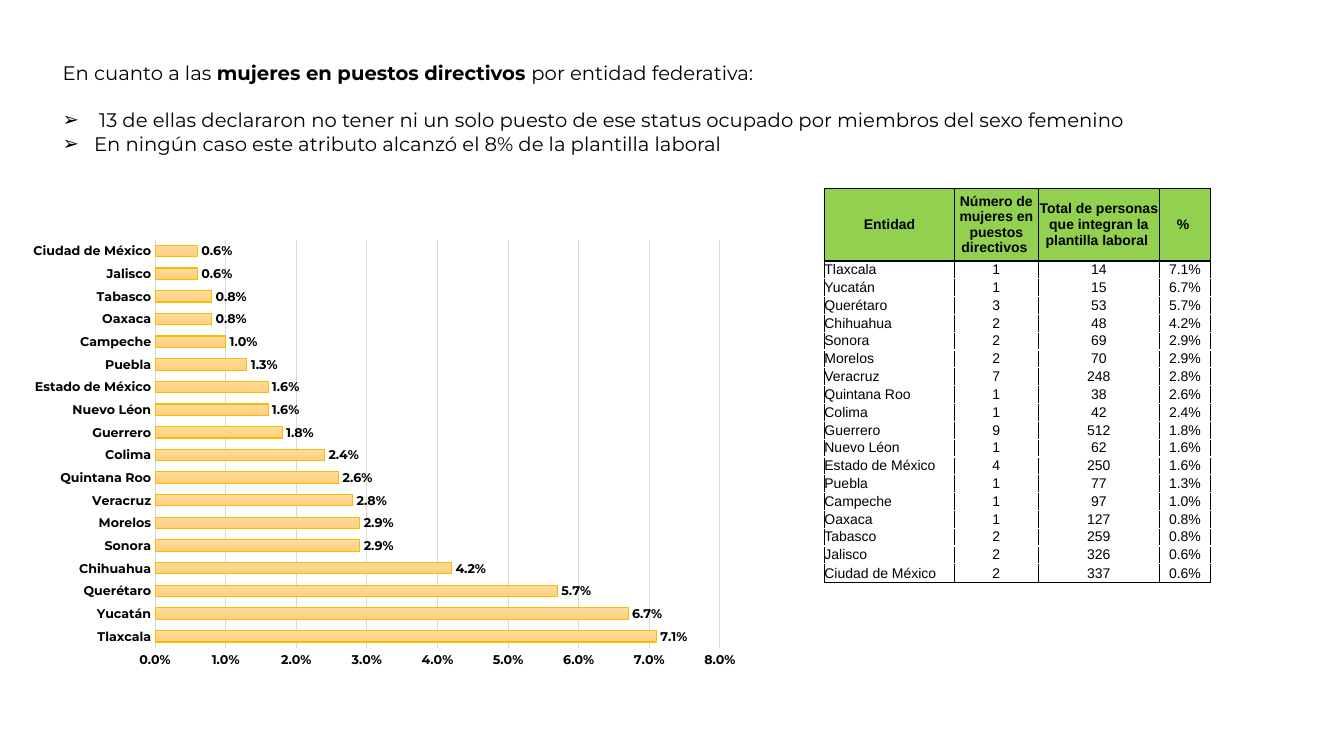
from dataclasses import dataclass

from lxml import etree
from pptx import Presentation
from pptx.chart.data import CategoryChartData
from pptx.dml.color import RGBColor
from pptx.enum.chart import XL_CHART_TYPE, XL_LABEL_POSITION, XL_TICK_MARK
from pptx.enum.text import MSO_ANCHOR, MSO_AUTO_SIZE, PP_ALIGN
from pptx.oxml import parse_xml
from pptx.oxml.ns import nsdecls, qn
from pptx.util import Pt

BAR_CLUSTERED = XL_CHART_TYPE.BAR_CLUSTERED
OUTSIDE_END = XL_LABEL_POSITION.OUTSIDE_END
NO_TICK = XL_TICK_MARK.NONE
TOP, MIDDLE = MSO_ANCHOR.TOP, MSO_ANCHOR.MIDDLE
NO_AUTOFIT = MSO_AUTO_SIZE.NONE
LEFT, CENTER = PP_ALIGN.LEFT, PP_ALIGN.CENTER


@dataclass(frozen=True)
class Theme:
    text_font: str = "Montserrat"
    table_font: str = "Arial"
    text_size: int = 14
    table_size: int = 10
    chart_size: int = 9
    black: RGBColor = RGBColor(0, 0, 0)
    header: RGBColor = RGBColor(0x92, 0xD0, 0x50)
    grid: RGBColor = RGBColor(0xD9, 0xD9, 0xD9)
    bar_line: RGBColor = RGBColor(0xF9, 0xBC, 0x00)
    bar_top: RGBColor = RGBColor(0xFF, 0xDB, 0x9E)
    bar_bottom: RGBColor = RGBColor(0xFF, 0xD0, 0x7C)


THEME = Theme()

INTRO = [
    ("En cuanto a las ", False),
    ("mujeres en puestos directivos ", True),
    ("por entidad federativa:", False),
]
FINDINGS = [
    " 13 de ellas declararon no tener ni un solo puesto de ese status ocupado por miembros del sexo femenino",
    "En ningún caso este atributo alcanzó el 8% de la plantilla laboral",
]
HEADINGS = [
    "Entidad",
    "Número de mujeres en puestos directivos ",
    "Total de personas que integran la plantilla laboral ",
    "% ",
]
# State, women in management posts, total staff
STATES = [
    ("Tlaxcala", 1, 14),
    ("Yucatán", 1, 15),
    ("Querétaro", 3, 53),
    ("Chihuahua", 2, 48),
    ("Sonora", 2, 69),
    ("Morelos", 2, 70),
    ("Veracruz", 7, 248),
    ("Quintana Roo", 1, 38),
    ("Colima", 1, 42),
    ("Guerrero", 9, 512),
    ("Nuevo Léon", 1, 62),
    ("Estado de México", 4, 250),
    ("Puebla", 1, 77),
    ("Campeche", 1, 97),
    ("Oaxaca", 1, 127),
    ("Tabasco", 2, 259),
    ("Jalisco", 2, 326),
    ("Ciudad de México", 2, 337),
]


def apply_format(target, values):
    for name, value in values.items():
        setattr(target, name, value)


def format_font(font, name, size, bold=False):
    apply_format(font, {"name": name, "size": Pt(size), "bold": bold})
    font.color.rgb = THEME.black


def add_span(para, text, font_name, size, bold=False):
    span = para.add_run()
    span.text = text
    format_font(span.font, font_name, size, bold)


def place_text(box, top, height):
    apply_format(box, {"left": Pt(37.5), "top": Pt(top), "width": Pt(849.5), "height": Pt(height)})
    apply_format(box.text_frame, {
        "word_wrap": True, "auto_size": NO_AUTOFIT, "vertical_anchor": TOP,
        "margin_left": Pt(7.2), "margin_right": Pt(7.2),
        "margin_top": Pt(3.6), "margin_bottom": Pt(3.6),
    })


def add_bullet(para):
    properties = para._p.get_or_add_pPr()
    properties.set("marL", str(Pt(22.5)))
    properties.set("indent", str(-Pt(22.5)))
    etree.SubElement(properties, qn("a:buFont")).set("typeface", THEME.table_font)
    etree.SubElement(properties, qn("a:buChar")).set("char", "➢")


def fill_intro(box):
    place_text(box, 39.6, 24.3)
    para = box.text_frame.paragraphs[0]
    para.alignment = LEFT
    for text, bold in INTRO:
        add_span(para, text, THEME.text_font, THEME.text_size, bold)


def fill_findings(box):
    place_text(box, 73.5, 41.5)
    for index, finding in enumerate(FINDINGS):
        para = box.text_frame.add_paragraph() if index else box.text_frame.paragraphs[0]
        add_bullet(para)
        apply_format(para, {"alignment": LEFT, "space_before": Pt(0), "space_after": Pt(0)})
        add_span(para, finding, THEME.text_font, THEME.text_size)


def set_borders(cell, sides):
    """Draw black lines on the given sides, in the order L, R, T, B."""
    properties = cell._tc.get_or_add_tcPr()
    for index, side in enumerate(sides):
        properties.insert(index, parse_xml(
            f'<a:ln{side} {nsdecls("a")} w="{Pt(1)}"><a:solidFill>'
            f'<a:srgbClr val="{THEME.black}"/></a:solidFill></a:ln{side}>'))


def add_state_table(slide):
    rows = [HEADINGS] + [
        [state, str(women), str(total), f"{women / total:.1%}"]
        for state, women, total in STATES
    ]
    widths = [92.9, 59.8, 86.6, 36.5]
    heights = [51.8] + [12.75] * (len(STATES) - 1) + [13.5]
    table = slide.shapes.add_table(
        len(rows), len(widths), Pt(588.9), Pt(134.6), Pt(sum(widths)), Pt(sum(heights))).table
    apply_format(table, {"first_row": False, "horz_banding": False})
    for column, width in zip(table.columns, widths):
        column.width = Pt(width)
    for row_index, (texts, height) in enumerate(zip(rows, heights)):
        table.rows[row_index].height = Pt(height)
        is_header = row_index == 0
        sides = "LR" + ("T" if row_index < 2 else "") + ("B" if row_index in (0, len(STATES)) else "")
        for column_index, text in enumerate(texts):
            cell = table.cell(row_index, column_index)
            apply_format(cell, {
                "margin_left": 0, "margin_right": 0, "margin_top": 0,
                "margin_bottom": 0, "vertical_anchor": MIDDLE,
            })
            para = cell.text_frame.paragraphs[0]
            para.alignment = CENTER if is_header or column_index else LEFT
            add_span(para, text, THEME.table_font, THEME.table_size, is_header)
            if is_header:
                cell.fill.solid()
                cell.fill.fore_color.rgb = THEME.header
            else:
                cell.fill.background()
            set_borders(cell, sides)


def format_line(line, color):
    line.color.rgb = color
    line.width = Pt(0.75)


def set_plot_area(chart, x, y, w, h):
    """Fix the inner plot area as fractions of the chart frame."""
    plot_area = chart._chartSpace.chart.plotArea
    for layout in plot_area.findall(qn("c:layout")):
        plot_area.remove(layout)
    sizes = "".join(f'<c:{key} val="{value}"/>' for key, value in zip("xywh", (x, y, w, h)))
    plot_area.insert(0, parse_xml(
        f'<c:layout {nsdecls("c")}><c:manualLayout><c:layoutTarget val="inner"/>'
        f'<c:xMode val="edge"/><c:yMode val="edge"/>{sizes}</c:manualLayout></c:layout>'))


def add_share_chart(slide):
    data = CategoryChartData(number_format="0.0%")
    data.categories = [state for state, _, _ in STATES]
    data.add_series("Series 1", [round(women / total, 3) for _, women, total in STATES])
    chart = slide.shapes.add_chart(
        BAR_CLUSTERED, Pt(13.7), Pt(164.9), Pt(522), Pt(318.2), data).chart
    apply_format(chart, {"has_legend": False, "has_title": False})
    format_font(chart.font, THEME.text_font, THEME.chart_size, True)
    set_plot_area(chart, 0.186, 0.02, 0.773, 0.916)

    for axis in (chart.category_axis, chart.value_axis):
        apply_format(axis, {"major_tick_mark": NO_TICK, "minor_tick_mark": NO_TICK})
        format_font(axis.tick_labels.font, THEME.text_font, THEME.chart_size, True)
    format_line(chart.category_axis.format.line, THEME.grid)
    shares = chart.value_axis
    apply_format(shares, {"minimum_scale": 0, "maximum_scale": 0.08, "major_unit": 0.01})
    shares.format.line.fill.background()
    format_line(shares.major_gridlines.format.line, THEME.grid)
    apply_format(shares.tick_labels, {"number_format": "0.0%", "number_format_is_linked": False})

    plot = chart.plots[0]
    apply_format(plot, {"gap_width": 100, "vary_by_categories": False, "has_data_labels": True})
    apply_format(plot.data_labels, {
        "show_value": True, "position": OUTSIDE_END,
        "number_format": "0.0%", "number_format_is_linked": False,
    })
    format_font(plot.data_labels.font, THEME.text_font, THEME.chart_size, True)
    bars = plot.series[0].format
    bars.fill.gradient()
    bars.fill.gradient_angle = 270
    for stop, color in zip(bars.fill.gradient_stops, (THEME.bar_top, THEME.bar_bottom)):
        stop.color.rgb = color
    format_line(bars.line, THEME.bar_line)


def main():
    deck = Presentation()
    apply_format(deck, {"slide_width": Pt(960), "slide_height": Pt(540)})
    slide = deck.slides.add_slide(deck.slide_layouts[1])
    fill_intro(slide.shapes.title)
    fill_findings(slide.placeholders[1])
    add_state_table(slide)
    add_share_chart(slide)
    deck.save("out.pptx")


if __name__ == "__main__":
    main()
